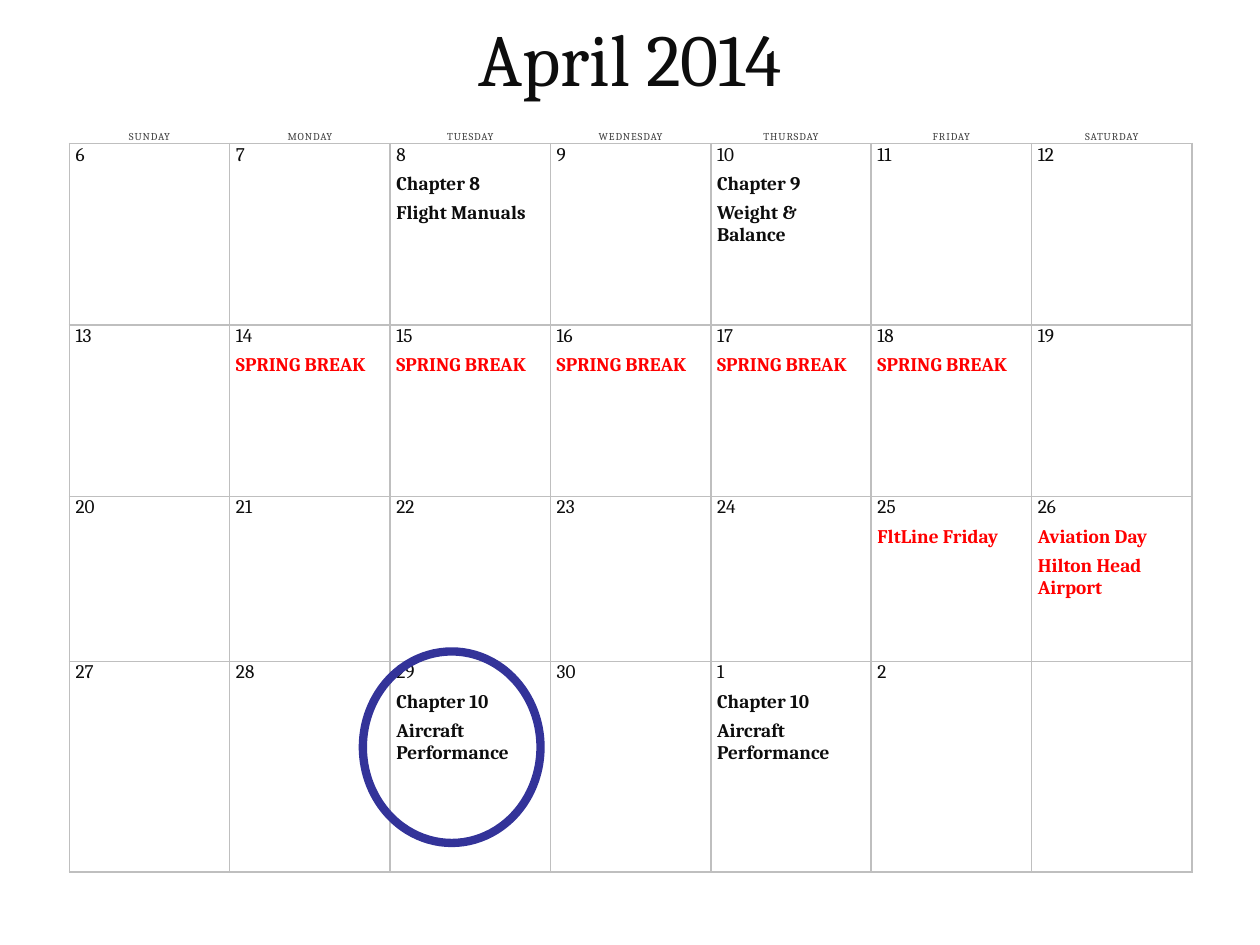
from pptx import Presentation
from pptx.dml.color import RGBColor
from pptx.enum import shapes, text
from pptx.oxml import parse_xml
from pptx.oxml.ns import nsdecls
from pptx.util import Inches, Pt

INK = RGBColor(0x0D, 0x0D, 0x0D)
HEADER_GRAY = RGBColor(0x40, 0x40, 0x40)
GRID_GRAY = RGBColor(0xBF, 0xBF, 0xBF)
RED = RGBColor(0xFF, 0x00, 0x00)
CIRCLE_BLUE = RGBColor(0x33, 0x33, 0x99)
FONT = "Cambria"

WEEKDAYS = ["SUNDAY", "MONDAY", "TUESDAY", "WEDNESDAY", "THURSDAY", "FRIDAY", "SATURDAY"]
WEEKS = [
    ["6", "7", "8", "9", "10", "11", "12"],
    ["13", "14", "15", "16", "17", "18", "19"],
    ["20", "21", "22", "23", "24", "25", "26"],
    ["27", "28", "29", "30", "1", "2", ""],
]
LESSONS = {
    "8": ["Chapter 8", "Flight Manuals"],
    "10": ["Chapter 9", "Weight & Balance"],
    "29": ["Chapter 10", "Aircraft Performance"],
    "1": ["Chapter 10", "Aircraft Performance"],
}
EVENTS = {day: ["SPRING BREAK"] for day in WEEKS[1][1:6]}
EVENTS["25"] = ["FltLine Friday"]
EVENTS["26"] = ["Aviation Day", "Hilton Head Airport"]

COLUMN_WIDTH = 1.273
HEADER_HEIGHT = 0.26
WEEK_HEIGHTS = [(1.08, 0.36), (1.2, 0.16), (1.2, 0.11), (1.03, 0.64)]


def add_span(para, words, size, color, bold=False):
    span = para.add_run()
    span.text = words
    span.font.name = FONT
    span.font.size = Pt(size)
    span.font.bold = bold
    span.font.color.rgb = color
    return span


def set_borders(cell, sides):
    properties = cell._tc.get_or_add_tcPr()
    for side in "LRTB":
        if side in sides:
            paint = f'<a:solidFill><a:srgbClr val="{GRID_GRAY}"/></a:solidFill>'
        else:
            paint = "<a:noFill/>"
        properties.append(parse_xml(f'<a:ln{side} {nsdecls("a")} w="{Pt(1)}">{paint}</a:ln{side}>'))


def format_cell(cell, sides):
    set_borders(cell, sides)
    cell.fill.background()
    cell.margin_left = cell.margin_right = Inches(0.05)
    cell.margin_top = cell.margin_bottom = 0


def add_line(cell, index, words, size, color, bold=False):
    frame = cell.text_frame
    para = frame.paragraphs[0] if index == 0 else frame.add_paragraph()
    para.space_before = para.space_after = Pt(2)
    return para, add_span(para, words, size, color, bold)


def fill_header(cell, weekday):
    format_cell(cell, "B")
    cell.vertical_anchor = text.MSO_ANCHOR.BOTTOM
    para, span = add_line(cell, 0, weekday, 6, HEADER_GRAY)
    para.alignment = text.PP_ALIGN.CENTER
    span._r.get_or_add_rPr().set("spc", "50")


def shrink_empty(cell):
    cell.text_frame.paragraphs[0]._p.get_or_add_endParaRPr().set("sz", "400")


def fill_day(cell, day):
    format_cell(cell, "LRT")
    if not day:
        shrink_empty(cell)
        return
    add_line(cell, 0, day, 11, INK)
    color = RED if day in EVENTS else INK
    for index, words in enumerate(EVENTS.get(day, LESSONS.get(day, [])), 1):
        add_line(cell, index, words, 11, color, True)


def fill_space(cell):
    format_cell(cell, "LRB")
    shrink_empty(cell)


def add_calendar(page):
    heights = [HEADER_HEIGHT] + [height for pair in WEEK_HEIGHTS for height in pair]
    columns = len(WEEKDAYS)
    table = page.shapes.add_table(
        len(heights), columns, Inches(0.55), Inches(0.88),
        Inches(COLUMN_WIDTH * columns), Inches(sum(heights)),
    ).table
    table.first_row = table.horz_banding = False
    for row, height in zip(table.rows, heights):
        row.height = Inches(height)
    for column, weekday in enumerate(WEEKDAYS):
        table.columns[column].width = Inches(COLUMN_WIDTH)
        fill_header(table.cell(0, column), weekday)
        for week, days in enumerate(WEEKS):
            fill_day(table.cell(2 * week + 1, column), days[column])
            fill_space(table.cell(2 * week + 2, column))


def add_title(page, words):
    title = page.shapes.title
    title.left, title.top = Inches(3.58), Inches(0.06)
    title.width, title.height = Inches(2.84), Inches(0.78)
    frame = title.text_frame
    frame.word_wrap = False
    frame.auto_size = text.MSO_AUTO_SIZE.NONE
    frame.vertical_anchor = text.MSO_ANCHOR.MIDDLE
    frame.margin_left = frame.margin_right = Inches(0.07)
    frame.margin_top = frame.margin_bottom = Inches(0.04)
    para = frame.paragraphs[0]
    para.alignment = text.PP_ALIGN.CENTER
    add_span(para, words, 42, INK)


def add_day_circle(page):
    circle = page.shapes.add_shape(
        shapes.MSO_SHAPE.OVAL, Inches(2.88), Inches(5.17), Inches(1.41), Inches(1.52)
    )
    circle.shadow.inherit = False
    circle.fill.background()
    circle.line.color.rgb = CIRCLE_BLUE
    circle.line.width = Pt(4.75)


def main():
    deck = Presentation()
    deck.slide_width, deck.slide_height = Inches(10), Inches(7.5)
    page = deck.slides.add_slide(deck.slide_layouts[5])
    add_calendar(page)
    add_title(page, "April 2014")
    add_day_circle(page)
    deck.save("out.pptx")


if __name__ == "__main__":
    main()
